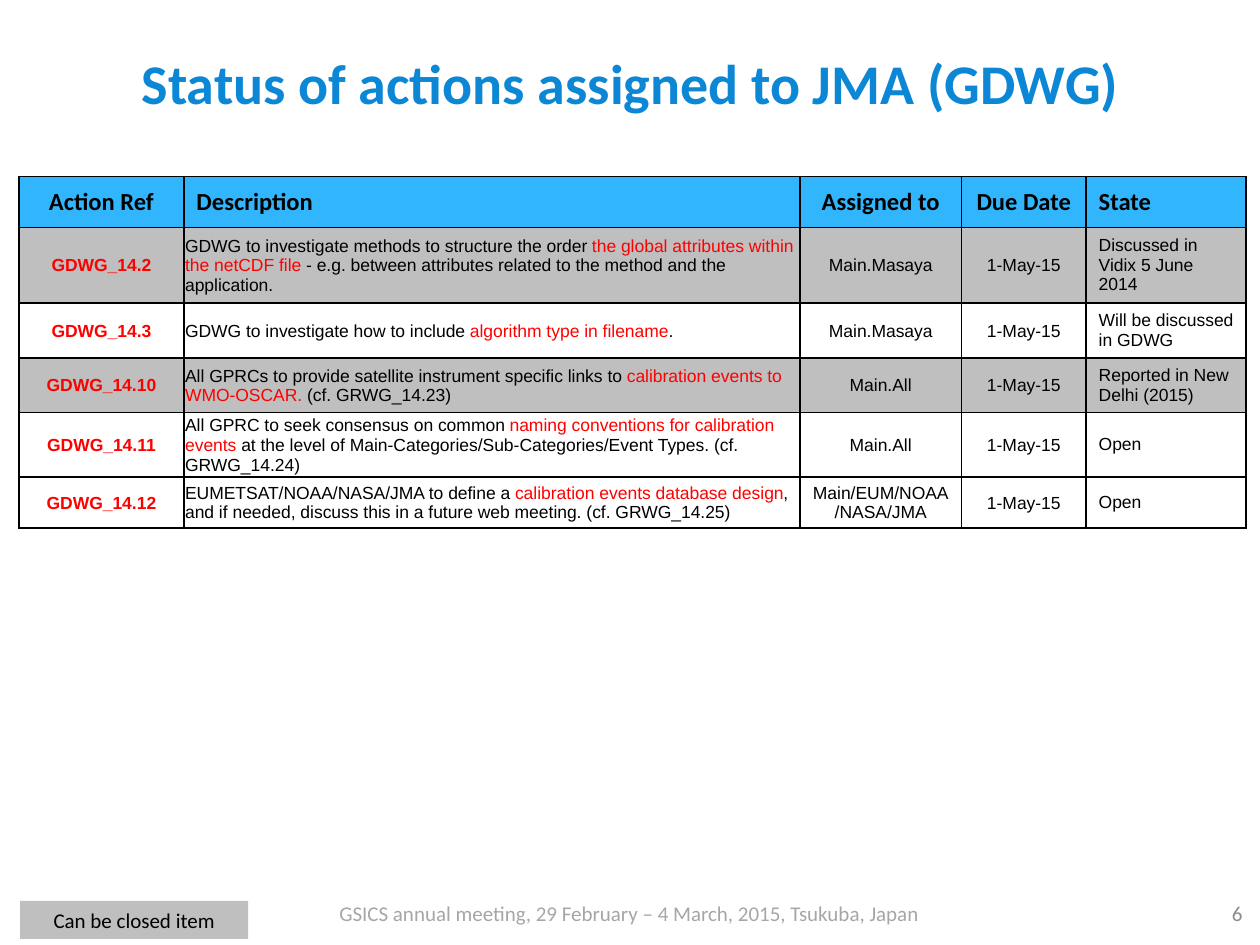
"""Build the slide listing the status of GDWG actions."""
from dataclasses import dataclass

from lxml.etree import SubElement
from pptx import Presentation
from pptx.dml.color import RGBColor
from pptx.enum.shapes import MSO_SHAPE as Shape
from pptx.enum.text import MSO_ANCHOR as Anchor, PP_ALIGN as Align
from pptx.oxml.ns import qn
from pptx.util import Pt

BLACK, RED, GREY, BLUE = "000000", "FF0000", "BFBFBF", "31B6FD"
COL_WIDTHS = (94.3, 352.1, 92.2, 71.3, 91.4)
HEADERS = ("Action Ref", "Description", "Assigned to", "Due Date", "State")
ALIGNS = (Align.CENTER, Align.LEFT, Align.CENTER, Align.CENTER, Align.LEFT)
ROW_HEIGHT = 29.2
TIGHT = dict(margin_left=Pt(0.7), margin_right=Pt(0.7), margin_top=Pt(0.7), margin_bottom=Pt(0))


@dataclass
class Style:
    size: float
    font: str = "Calibri"
    color: str = BLACK
    bold: bool = False
    align: Align = Align.CENTER


@dataclass
class Action:
    ref: str
    before: str
    key: str
    after: str
    owner: str
    state: str
    closable: bool = False
    due: str = "1-May-15"


ACTIONS = (
    Action("GDWG_14.2", "GDWG to investigate methods to structure the order ",
           "the global attributes within the netCDF file",
           " - e.g. between attributes related to the method and the application.",
           "Main.Masaya", "Discussed in Vidix 5 June 2014", True),
    Action("GDWG_14.3", "GDWG to investigate how to include ", "algorithm type in filename", ".",
           "Main.Masaya", "Will be discussed in GDWG"),
    Action("GDWG_14.10", "All GPRCs to provide satellite instrument specific links to ",
           "calibration events to WMO-OSCAR.", " (cf. GRWG_14.23)",
           "Main.All", "Reported in New Delhi (2015)", True),
    Action("GDWG_14.11", "All GPRC to seek consensus on common ",
           "naming conventions for calibration events ",
           "at the level of Main-Categories/Sub-Categories/Event Types. (cf. GRWG_14.24)",
           "Main.All", "Open"),
    Action("GDWG_14.12", "EUMETSAT/NOAA/NASA/JMA to define a ",
           "calibration events database design",
           ", and if needed, discuss this in a future web meeting. (cf. GRWG_14.25)",
           "Main/EUM/NOAA\n/NASA/JMA", "Open"),
)


def rgb(color: str) -> RGBColor:
    return RGBColor.from_string(color)


def set_attrs(obj, values: dict) -> None:
    for name, value in values.items():
        setattr(obj, name, value)


def add_run(p, text: str, style: Style, color: str = "") -> None:
    r = p.add_run()
    r.text = text
    set_attrs(r.font, dict(size=Pt(style.size), name=style.font, bold=style.bold))
    r.font.color.rgb = rgb(color or style.color)


def write(tf, text: str, style: Style) -> None:
    for i, line in enumerate(text.split("\n")):
        p = tf.add_paragraph() if i else tf.paragraphs[0]
        p.alignment = style.align
        add_run(p, line, style)


def place(sp, box: tuple, text: str, style: Style) -> None:
    set_attrs(sp, dict(zip(("left", "top", "width", "height"), map(Pt, box))))
    tf = sp.text_frame
    set_attrs(tf, dict(word_wrap=True, vertical_anchor=Anchor.MIDDLE))
    write(tf, text, style)


def format_cell(cell, fill: str) -> None:
    cell.vertical_anchor = Anchor.MIDDLE
    tc_pr = cell._tc.get_or_add_tcPr()
    for side in ("a:lnL", "a:lnR", "a:lnT", "a:lnB"):
        ln = SubElement(tc_pr, qn(side), w=str(Pt(1)))
        SubElement(SubElement(ln, qn("a:solidFill")), qn("a:srgbClr"), val=BLACK)
    if fill:
        cell.fill.solid()
        cell.fill.fore_color.rgb = rgb(fill)
    else:
        cell.fill.background()


def fill_action(cells: list, action: Action) -> None:
    texts = (action.ref, "", action.owner, action.due, action.state)
    for i, (cell, text, align) in enumerate(zip(cells, texts, ALIGNS)):
        format_cell(cell, GREY if action.closable else "")
        if i < len(cells) - 1:
            set_attrs(cell, TIGHT)
        style = Style(10, "Arial", BLACK if i else RED, i == 0, align)
        if text:
            write(cell.text_frame, text, style)
            continue
        p = cell.text_frame.paragraphs[0]
        p.alignment = align
        for part, color in ((action.before, BLACK), (action.key, RED), (action.after, BLACK)):
            add_run(p, part, style, color)


def add_actions(s) -> None:
    rows = len(ACTIONS) + 1
    table = s.shapes.add_table(rows, len(HEADERS), Pt(10.8), Pt(100.8),
                               Pt(sum(COL_WIDTHS)), Pt(ROW_HEIGHT * rows)).table
    for col, width in zip(table.columns, COL_WIDTHS):
        col.width = Pt(width)
    header, *body = ([*row.cells] for row in table.rows)
    for cell, text, align in zip(header, HEADERS, ALIGNS):
        format_cell(cell, BLUE)
        write(cell.text_frame, text, Style(14, bold=True, align=align))
    for cells, action in zip(body, ACTIONS):
        fill_action(cells, action)


def add_legend(s) -> None:
    sp = s.shapes.add_shape(Shape.RECTANGLE, 0, 0, 0, 0)
    sp.shadow.inherit = False
    sp.fill.solid()
    sp.fill.fore_color.rgb = rgb(GREY)
    sp.line.fill.background()
    place(sp, (11.5, 514.8, 130.3, 21.8), "Can be closed item", Style(12))


def main() -> None:
    prs = Presentation()
    set_attrs(prs, dict(slide_width=Pt(720), slide_height=Pt(540)))
    s = prs.slides.add_slide(prs.slide_layouts[5])
    place(s.shapes.title, (25.2, 16.6, 670.3, 60.5), "Status of actions assigned to JMA (GDWG)",
          Style(32, color="0B87D6", bold=True))
    place(s.shapes.add_textbox(0, 0, 0, 0), (161.3, 507.6, 396.7, 28.8),
          "GSICS annual meeting, 29 February – 4 March, 2015, Tsukuba, Japan",
          Style(12, color="A6A6A6"))
    place(s.shapes.add_textbox(0, 0, 0, 0), (676.8, 507.6, 40.3, 28.8), "6",
          Style(12, color="8C8C8C", align=Align.RIGHT))
    add_actions(s)
    add_legend(s)
    prs.save("out.pptx")


if __name__ == "__main__":
    main()
